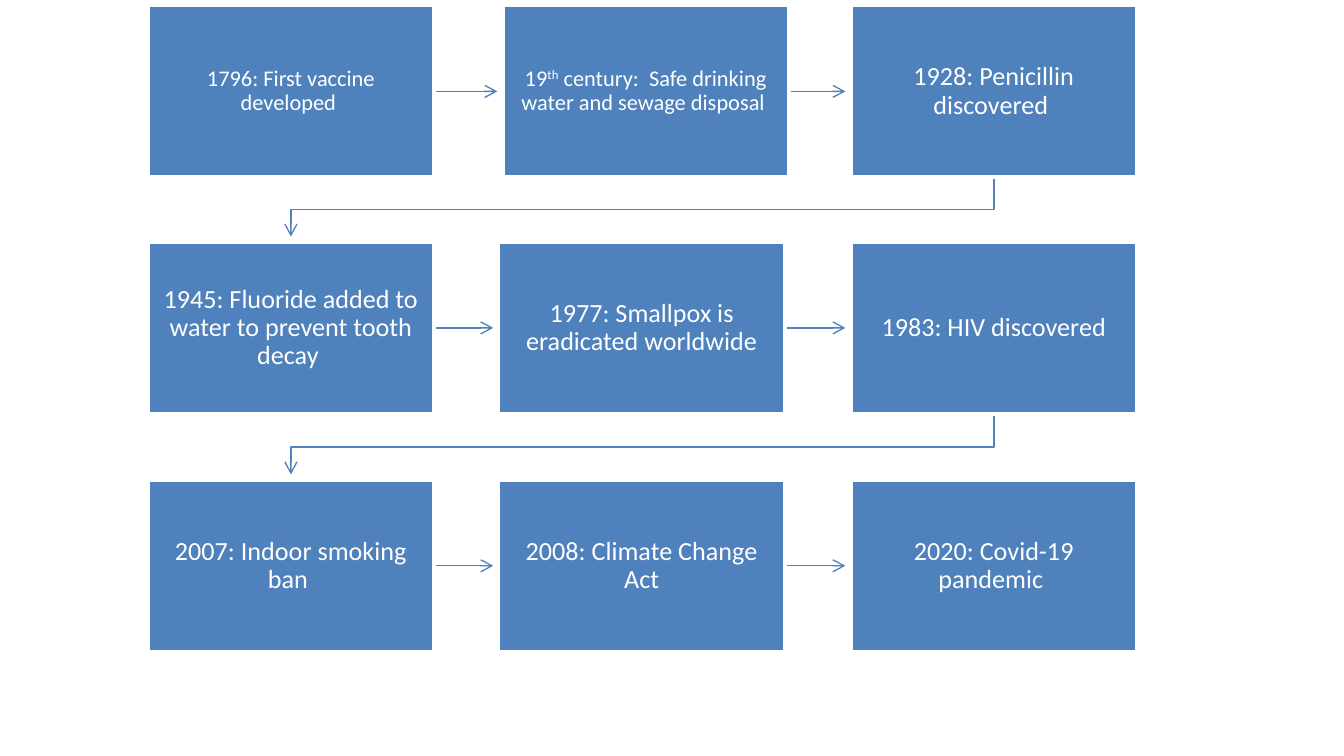
from dataclasses import dataclass

from lxml import etree
from pptx import Presentation
from pptx.dml.color import RGBColor
from pptx.enum.shapes import MSO_CONNECTOR, MSO_SHAPE
from pptx.enum.text import MSO_ANCHOR, PP_ALIGN
from pptx.oxml.ns import qn
from pptx.util import Inches, Pt

STRAIGHT = MSO_CONNECTOR.STRAIGHT
RECT = MSO_SHAPE.RECTANGLE
MIDDLE = MSO_ANCHOR.MIDDLE
CENTER = PP_ALIGN.CENTER
RIGHT_SIDE = 3

LEFTS = (1.1, 3.71, 6.33)
TOPS = (0.04, 1.8, 3.57)
WIDE, HIGH = 2.13, 1.28
GAP = 0.04
SHIFT = 0.03

EVENTS = (
    ("1796: First vaccine developed ",
     "19^th^ century:  Safe drinking water and sewage disposal ",
     "1928: Penicillin discovered "),
    ("1945: Fluoride added to water to prevent tooth decay ",
     "1977: Smallpox is eradicated worldwide",
     "1983: HIV discovered"),
    ("2007: Indoor smoking ban ",
     "2008: Climate Change Act",
     "2020: Covid-19 pandemic "),
)


@dataclass(frozen=True)
class Theme:
    blue: RGBColor = RGBColor(0x4F, 0x81, 0xBD)
    white: RGBColor = RGBColor(0xFF, 0xFF, 0xFF)
    font: str = "Calibri"
    small: float = 12
    large: float = 14
    edge: float = 2
    thin: float = 0.75


class Flow:
    """Draws the boxes and arrows of a timeline on one slide."""

    def __init__(self, slide, theme):
        self.slide = slide
        self.theme = theme

    def box(self, left, top, text, size, inset):
        shape = self.slide.shapes.add_shape(
            RECT, Inches(left), Inches(top), Inches(WIDE), Inches(HIGH))
        shape.shadow.inherit = False
        shape.fill.solid()
        shape.fill.fore_color.rgb = self.theme.blue
        shape.line.color.rgb = self.theme.white
        shape.line.width = Pt(self.theme.edge)
        frame = shape.text_frame
        frame.word_wrap = True
        frame.vertical_anchor = MIDDLE
        frame.margin_left = frame.margin_right = Inches(inset)
        frame.margin_top = frame.margin_bottom = Inches(inset)
        para = frame.paragraphs[0]
        para.alignment = CENTER
        para.line_spacing = 0.9
        for index, part in enumerate(text.split("^")):
            run = para.add_run()
            run.text = part
            run.font.name = self.theme.font
            run.font.size = Pt(size)
            run.font.color.rgb = self.theme.white
            if index % 2:
                run.font._element.set("baseline", "30000")
        return shape

    def finish(self, shape):
        shape.line.color.rgb = self.theme.blue
        shape.line.width = Pt(self.theme.thin)
        line = shape.line._get_or_add_ln()
        etree.SubElement(line, qn("a:tailEnd"), type="arrow")
        self.slide.shapes._spTree.insert(2, shape._element)

    def arrow(self, start, end):
        mid = start.top + start.height // 2
        link = self.slide.shapes.add_connector(
            STRAIGHT, start.left + start.width, mid, end.left - Inches(GAP), mid)
        link.begin_connect(start, RIGHT_SIDE)
        self.finish(link)
        etree.SubElement(link._element.spPr, qn("a:effectLst"))

    def turn(self, start, end):
        begin = start.left + start.width // 2
        stop = end.left + end.width // 2
        base = start.top + start.height
        bend = (base + end.top) // 2
        path = self.slide.shapes.build_freeform(begin, base)
        path.add_line_segments(
            [(begin, bend), (stop, bend), (stop, end.top - Inches(GAP))],
            close=False)
        shape = path.convert_to_shape()
        shape.shadow.inherit = False
        shape.fill.background()
        self.finish(shape)


def main():
    deck = Presentation()
    deck.slide_width = Inches(10)
    deck.slide_height = deck.slide_width * 9 // 16
    theme = Theme()
    flow = Flow(deck.slides.add_slide(deck.slide_layouts[6]), theme)

    rows = []
    for row, texts in enumerate(EVENTS):
        boxes = []
        for col, text in enumerate(texts):
            early = row == 0 and col < 2
            left = LEFTS[col] + (SHIFT if early and col else 0)
            size = theme.small if early else theme.large
            inset = 0.09 if early else 0.11
            boxes.append(flow.box(left, TOPS[row], text, size, inset))
        rows.append(boxes)

    for boxes in rows:
        for start, end in zip(boxes, boxes[1:]):
            flow.arrow(start, end)
    for upper, lower in zip(rows, rows[1:]):
        flow.turn(upper[-1], lower[0])

    deck.save("out.pptx")


if __name__ == "__main__":
    main()
